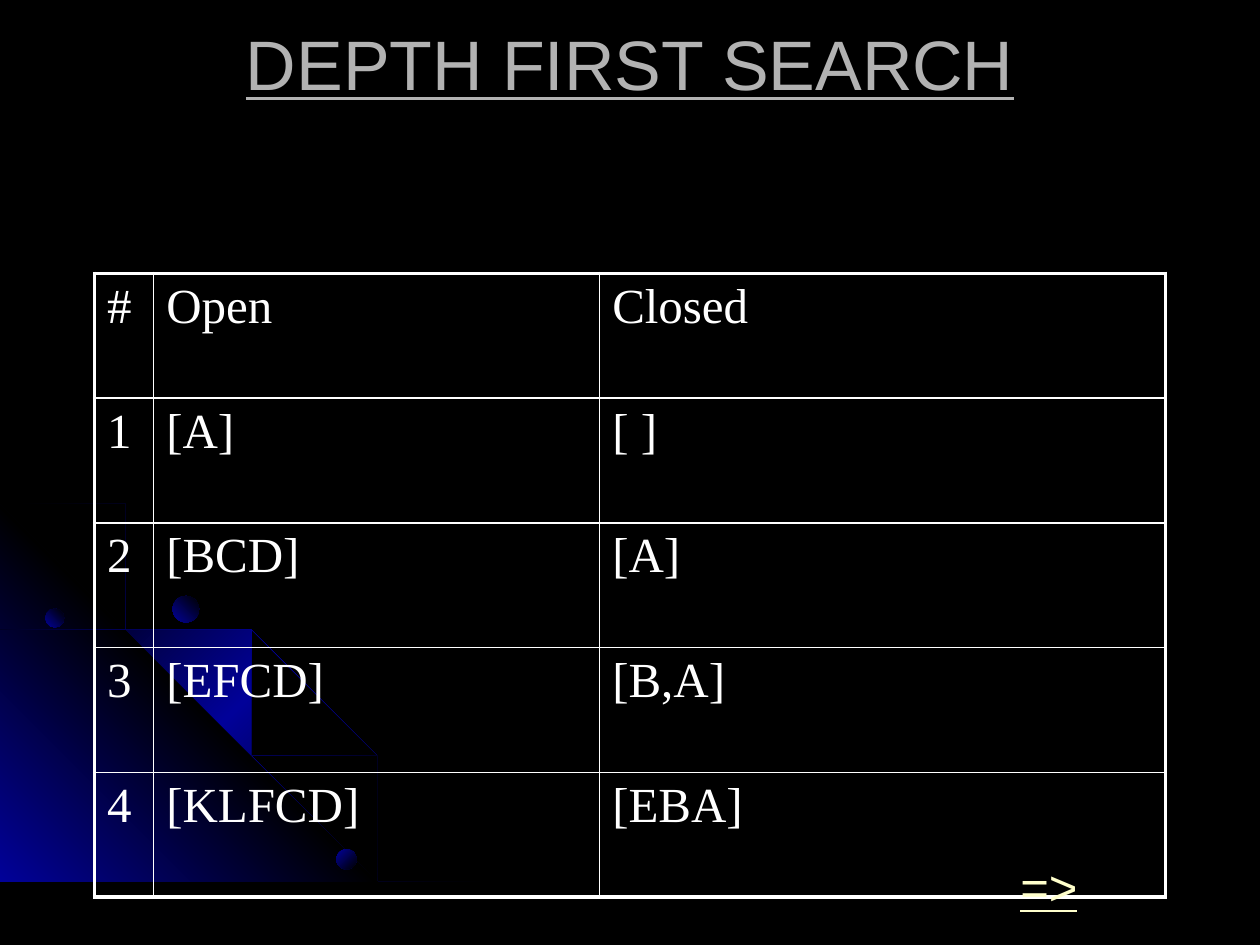
"""Build the depth first search slide with its table of open and closed lists."""
from dataclasses import dataclass

from lxml.etree import SubElement
from pptx import Presentation
from pptx.dml.color import RGBColor
from pptx.enum.shapes import MSO_SHAPE
from pptx.enum.text import MSO_ANCHOR, MSO_AUTO_SIZE, PP_ALIGN
from pptx.oxml.ns import qn
from pptx.util import Inches, Pt


@dataclass(frozen=True)
class Theme:
    back: str = "000000"
    glow: str = "010199"
    title: str = "B2B2B2"
    text: str = "FFFFFF"
    link: str = "FFFFCC"
    head_font: str = "Arial"
    cell_font: str = "Times New Roman"
    title_size: int = 40
    text_size: int = 28
    outer_line: float = 2.25
    inner_line: float = 1


THEME = Theme()
TITLE = "DEPTH FIRST SEARCH"
NEXT = "=>"
ROWS = [
    ("#", "Open", "Closed"),
    ("1", "[A]", "[ ]"),
    ("2", "[BCD]", "[A]"),
    ("3", "[EFCD]", "[B,A]"),
    ("4", "[KLFCD]", "[EBA]"),
]
COL_WIDTHS = (0.47, 3.54, 4.49)
ROW_HEIGHT = 0.99

FADE = (THEME.back, THEME.glow, THEME.back)
CORNER_FADE = (THEME.glow, THEME.back, THEME.glow)
DOT_FADE = (THEME.glow, THEME.back)
OUTER_ARC = [
    (0.57, 4.47), (0.28, 4.41), (0, 4.35), (0, 4.38), (0.28, 4.43), (0.56, 4.49),
    (0.97, 4.61), (1.35, 4.78), (1.73, 4.99), (2.08, 5.23), (2.41, 5.49),
    (2.71, 5.79), (2.98, 6.12), (3.23, 6.49), (3.37, 6.73), (3.5, 6.98),
    (3.6, 7.23), (3.7, 7.49), (3.72, 7.49), (3.62, 7.23), (3.52, 6.98),
    (3.39, 6.73), (3.25, 6.48), (3, 6.11), (2.72, 5.78), (2.42, 5.48),
    (2.09, 5.21), (1.74, 4.97), (1.36, 4.77), (0.98, 4.59),
]
CORNER = [(3.22, 7.49), (0, 7.49), (0, 4.27)]
INNER_ARC = [
    (2.85, 7.14), (2.94, 7.32), (3.01, 7.49), (3.03, 7.49), (2.96, 7.3),
    (2.86, 7.12), (2.66, 6.76), (2.42, 6.4), (2.15, 6.06), (1.84, 5.76),
    (1.52, 5.49), (1.17, 5.26), (0.79, 5.05), (0.41, 4.88), (0, 4.75),
    (0, 4.77), (0.39, 4.9), (0.77, 5.07), (1.15, 5.28), (1.5, 5.51),
    (1.83, 5.78), (2.13, 6.08), (2.4, 6.41), (2.65, 6.77),
]
MIDDLE_ARC = [
    (0, 4.42), (0, 4.44), (0.36, 4.57), (0.74, 4.75), (1.09, 4.94), (1.42, 5.18),
    (1.73, 5.44), (2.02, 5.75), (2.27, 6.05), (2.52, 6.41), (2.67, 6.67),
    (2.8, 6.94), (2.92, 7.22), (3.01, 7.49), (3.03, 7.49), (2.94, 7.2),
    (2.82, 6.93), (2.69, 6.65), (2.54, 6.39), (2.29, 6.03), (2.04, 5.73),
    (1.75, 5.43), (1.44, 5.16), (1.11, 4.93), (0.76, 4.73), (0.39, 4.55),
]
OUTLINES = [
    (OUTER_ARC, FADE, 45),
    (CORNER, CORNER_FADE, 315),
    (INNER_ARC, FADE, 45),
    (MIDDLE_ARC, FADE, 45),
]
DOTS = [(0.36, 4.83, 0.15, 315), (2.67, 6.74, 0.16, 45), (1.37, 4.73, 0.21, 315)]


def set_gradient(sp, colors, angle):
    sp.shadow.inherit = False
    sp.line.fill.background()
    sp.fill.gradient()
    grad = sp.fill._xPr.find(qn("a:gradFill"))
    for child in list(grad):
        grad.remove(child)
    stops = SubElement(grad, qn("a:gsLst"))
    for i, color in enumerate(colors):
        stop = SubElement(stops, qn("a:gs"), pos=str(i * 100000 // (len(colors) - 1)))
        SubElement(stop, qn("a:srgbClr"), val=color)
    SubElement(grad, qn("a:lin"), ang=str(angle * 60000), scaled="1")


def set_font(p, name, size, color, underline=False):
    p.font.name = name
    p.font.size = Pt(size)
    p.font.color.rgb = RGBColor.from_string(color)
    p.font.underline = underline


def set_borders(cell, outer_sides):
    tc_pr = cell._tc.get_or_add_tcPr()
    for side in "LRTB":
        width = THEME.outer_line if side in outer_sides else THEME.inner_line
        ln = SubElement(tc_pr, qn(f"a:ln{side}"), w=str(Pt(width)))
        fill = SubElement(ln, qn("a:solidFill"))
        SubElement(fill, qn("a:srgbClr"), val=THEME.text)


def add_decoration(s):
    shapes = s.shapes.add_group_shape().shapes
    for points, colors, angle in OUTLINES:
        builder = shapes.build_freeform(*points[0], scale=Inches(1))
        builder.add_line_segments(points[1:], close=True)
        set_gradient(builder.convert_to_shape(), colors, angle)
    for left, top, size, angle in DOTS:
        box = [Inches(v) for v in (left, top, size, size)]
        set_gradient(shapes.add_shape(MSO_SHAPE.OVAL, *box), DOT_FADE, angle)


def add_search_table(s):
    n_rows, n_cols = len(ROWS), len(COL_WIDTHS)
    table = s.shapes.add_table(
        n_rows, n_cols, Inches(0.75), Inches(2.17),
        Inches(sum(COL_WIDTHS)), Inches(ROW_HEIGHT * n_rows),
    ).table
    table.first_row = table.horz_banding = False
    for col, width in zip(table.columns, COL_WIDTHS):
        col.width = Inches(width)
    for r, values in enumerate(ROWS):
        table.rows[r].height = Inches(ROW_HEIGHT)
        for c, value in enumerate(values):
            cell = table.cell(r, c)
            cell.text = value
            set_font(cell.text_frame.paragraphs[0], THEME.cell_font,
                     THEME.text_size, THEME.text)
            edges = {"L": c == 0, "R": c == n_cols - 1, "T": r == 0, "B": r == n_rows - 1}
            set_borders(cell, [side for side, outer in edges.items() if outer])
            cell.fill.background()


def add_title(s):
    sp = s.shapes.title
    sp.left, sp.top, sp.width, sp.height = [Inches(v) for v in (0.75, 0.25, 8.5, 0.5)]
    tf = sp.text_frame
    tf.text = TITLE
    tf.auto_size = MSO_AUTO_SIZE.NONE
    tf.vertical_anchor = MSO_ANCHOR.MIDDLE
    p = tf.paragraphs[0]
    p.alignment = PP_ALIGN.CENTER
    set_font(p, THEME.head_font, THEME.title_size, THEME.title, True)


def add_next_mark(s):
    tf = s.shapes.add_textbox(Inches(8), Inches(6.75), Inches(0.66), Inches(0.57)).text_frame
    tf.text = NEXT
    tf.word_wrap = False
    tf.auto_size = MSO_AUTO_SIZE.SHAPE_TO_FIT_TEXT
    set_font(tf.paragraphs[0], THEME.head_font, THEME.text_size, THEME.link, True)


def main():
    prs = Presentation()
    prs.slide_width, prs.slide_height = Inches(10), Inches(7.5)
    s = prs.slides.add_slide(prs.slide_layouts[5])
    s.background.fill.solid()
    s.background.fill.fore_color.rgb = RGBColor.from_string(THEME.back)
    add_decoration(s)
    add_search_table(s)
    add_next_mark(s)
    add_title(s)
    prs.save("out.pptx")


if __name__ == "__main__":
    main()
